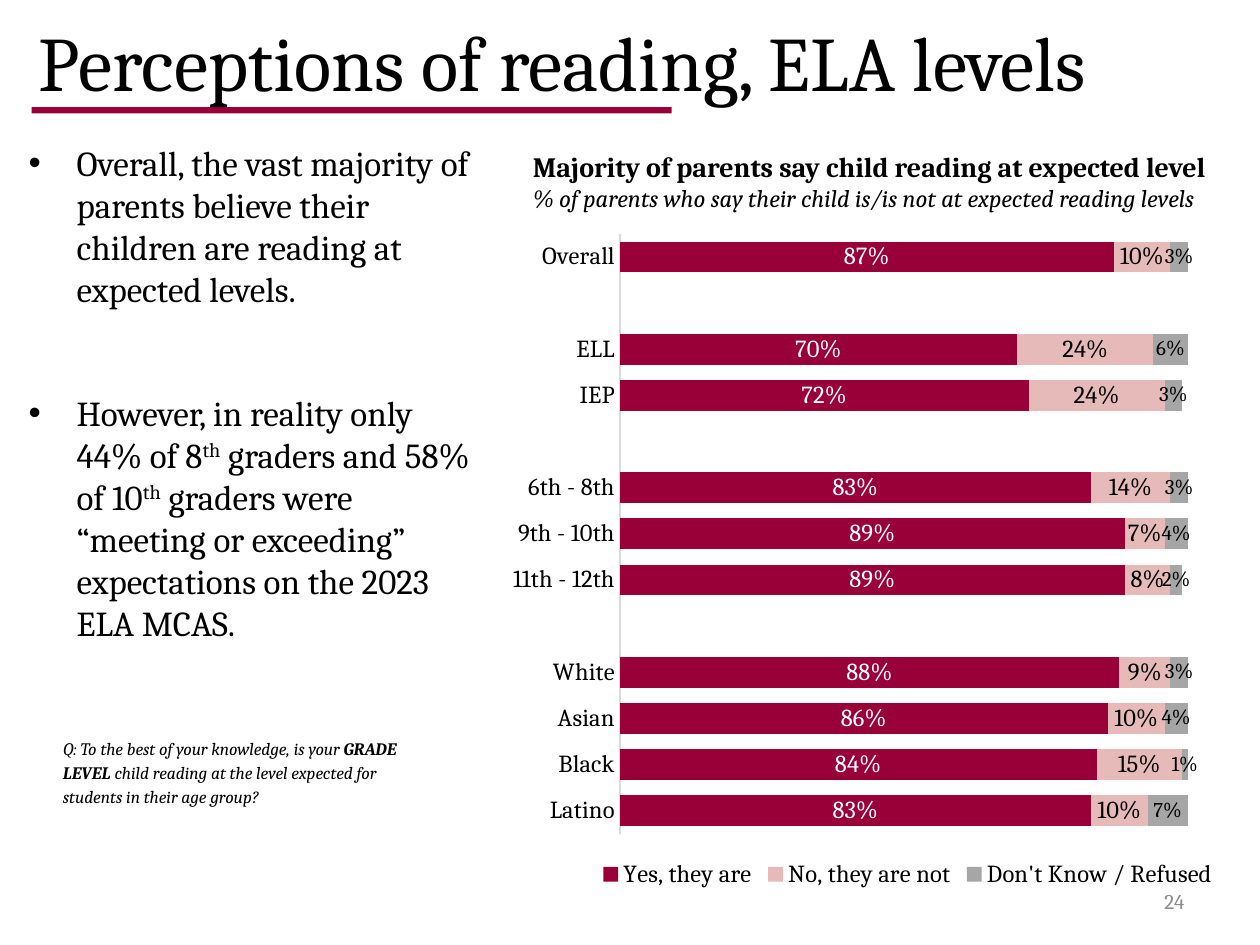
from lxml.etree import SubElement
from pptx import Presentation
from pptx.chart.data import CategoryChartData
from pptx.dml.color import RGBColor
from pptx.enum.chart import XL_CHART_TYPE, XL_LABEL_POSITION, XL_LEGEND_POSITION, XL_TICK_MARK
from pptx.enum.shapes import MSO_SHAPE
from pptx.enum.text import MSO_ANCHOR, PP_ALIGN
from pptx.oxml import parse_xml
from pptx.oxml.ns import nsdecls, qn
from pptx.util import Inches, Pt

COLORS = {
    "crimson": "990038",
    "pink": "E6BAB8",
    "gray": "A6A6A6",
    "axis": "D9D9D9",
    "number": "8C8C8C",
    "black": "000000",
    "white": "FFFFFF",
}
FONT = "Cambria"
PERCENT = "###0%"
WIDTH, HEIGHT = Inches(10), Inches(7.5)

CATEGORIES = ["Latino", "Black", "Asian", "White", "", "11th - 12th", "9th - 10th",
              "6th - 8th", "", "IEP", "ELL", "", "Overall"]
SERIES = [
    ("Yes, they are", "crimson", "white", 14,
     [0.83, 0.84, 0.86, 0.88, None, 0.89, 0.89, 0.83, None, 0.72, 0.7, None, 0.87]),
    ("No, they are not", "pink", "black", 14,
     [0.1, 0.15, 0.1, 0.09, None, 0.08, 0.07, 0.14, None, 0.24, 0.24, None, 0.1]),
    ("Don't Know / Refused", "gray", "black", 12,
     [0.07, 0.01, 0.04, 0.03, None, 0.02, 0.04, 0.03, None, 0.03, 0.06, None, 0.03]),
]
BULLETS = [
    [("Overall, the vast majority of parents believe their children are reading at "
      "expected levels.", "")],
    [("However, in reality only 44% of 8", ""), ("th", "super"),
     (" graders and 58% of 10", ""), ("th", "super"),
     (" graders were “meeting or exceeding” expectations on the 2023 ELA MCAS.", "")],
]


def color(name):
    return RGBColor.from_string(COLORS[name])


def place(left, top, width, height):
    return [int(share * side / 100) for share, side in
            zip((left, top, width, height), (WIDTH, HEIGHT, WIDTH, HEIGHT))]


def style_font(font, size, name="black"):
    font.name = FONT
    font.size = Pt(size)
    font.color.rgb = color(name)


def add_text(page, area, paragraphs, size, name="black", anchor=MSO_ANCHOR.TOP):
    frame = page.shapes.add_textbox(*place(*area)).text_frame
    frame.word_wrap = True
    frame.vertical_anchor = anchor
    for index, parts in enumerate(paragraphs):
        para = frame.paragraphs[0] if index == 0 else frame.add_paragraph()
        for text, look in parts:
            span = para.add_run()
            span.text = text
            style_font(span.font, size, name)
            if "bold" in look:
                span.font.bold = True
            if "italic" in look:
                span.font.italic = True
            if "super" in look:
                span.font._element.set("baseline", "30000")
    return frame


def add_bullets(page, area):
    frame = add_text(page, area, BULLETS, 20)
    for para in frame.paragraphs:
        properties = para._p.get_or_add_pPr()
        properties.set("marL", str(Inches(0.38)))
        properties.set("indent", str(Inches(-0.38)))
        SubElement(properties, qn("a:buFont"), typeface="Arial")
        SubElement(properties, qn("a:buChar"), char="•")
    for para in frame.paragraphs[1:]:
        para.space_before = Pt(47)


def add_rule(page, area):
    rule = page.shapes.add_shape(MSO_SHAPE.RECTANGLE, *place(*area))
    rule.shadow.inherit = False
    rule.fill.solid()
    rule.fill.fore_color.rgb = color("crimson")
    rule.line.fill.background()


def manual_layout(left, top, width, height, inner=False):
    target = '<c:layoutTarget val="inner"/>' if inner else ""
    modes = "".join(f'<c:{axis}Mode val="edge"/>' for axis in "xy")
    sizes = "".join(f'<c:{key} val="{value}"/>' for key, value in
                    zip("xywh", (left, top, width, height)))
    return parse_xml(f'<c:layout {nsdecls("c")}><c:manualLayout>{target}{modes}{sizes}'
                     "</c:manualLayout></c:layout>")


def style_axes(chart):
    groups = chart.category_axis
    groups.major_tick_mark = groups.minor_tick_mark = XL_TICK_MARK.NONE
    groups.has_major_gridlines = False
    groups.format.line.color.rgb = color("axis")
    groups.format.line.width = Pt(0.75)
    style_font(groups.tick_labels.font, 14)
    shares = chart.value_axis
    shares.minimum_scale, shares.maximum_scale = 0, 1
    shares.has_major_gridlines = False
    shares.tick_labels.number_format = PERCENT
    shares.tick_labels.number_format_is_linked = False
    shares.visible = False


def style_series(series, fill, label_color, label_size):
    series.format.fill.solid()
    series.format.fill.fore_color.rgb = color(fill)
    labels = series.data_labels
    labels.show_value = True
    labels.position = XL_LABEL_POSITION.CENTER
    labels.number_format = PERCENT
    labels.number_format_is_linked = False
    style_font(labels.font, label_size, label_color)


def add_reading_chart(page, area):
    data = CategoryChartData(number_format=PERCENT)
    data.categories = CATEGORIES
    for title, *_, values in SERIES:
        data.add_series(title, values)
    chart = page.shapes.add_chart(XL_CHART_TYPE.BAR_STACKED, *place(*area), data).chart
    chart.has_title = False
    style_font(chart.font, 14)
    style_axes(chart)
    plot = chart.plots[0]
    plot.gap_width, plot.overlap = 50, 100
    plot.vary_by_categories = False
    for series, (_, fill, label_color, label_size, _) in zip(plot.series, SERIES):
        style_series(series, fill, label_color, label_size)
    chart.has_legend = True
    chart.legend.position = XL_LEGEND_POSITION.BOTTOM
    chart.legend.include_in_layout = False
    style_font(chart.legend.font, 14)
    plot_area = chart.element.find(".//" + qn("c:plotArea"))
    for layout in plot_area.findall(qn("c:layout")):
        plot_area.remove(layout)
    plot_area.insert(0, manual_layout(0.15, 0.02, 0.69, 0.89, inner=True))
    legend_position = chart.element.find(".//" + qn("c:legendPos"))
    legend_position.addnext(manual_layout(0.12, 0.94, 0.76, 0.06))


def main():
    deck = Presentation()
    deck.slide_width, deck.slide_height = WIDTH, HEIGHT
    page = deck.slides.add_slide(deck.slide_layouts[6])
    add_rule(page, (2.5, 11.33, 50.8, 0.67))
    add_text(page, (2.1, 0, 98.7, 12.93), [[("Perceptions of reading, ELA levels", "")]],
             44, anchor=MSO_ANCHOR.MIDDLE)
    add_bullets(page, (1.3, 14.27, 37.3, 74.13))
    number = add_text(page, (71.7, 92.67, 23.3, 5.33), [[("24", "")]], 12, "number",
                      MSO_ANCHOR.MIDDLE)
    number.paragraphs[0].alignment = PP_ALIGN.RIGHT
    add_reading_chart(page, (39.4, 23.33, 65.3, 71.33))
    heading = add_text(page, (41.3, 15.2, 60.8, 8.13), [
        [("Majority of parents say child reading at expected level", "bold")],
        [("% of parents who say their child is/is not at expected reading levels", "italic")],
    ], 14)
    heading.paragraphs[0].runs[0].font.size = Pt(16)
    question = add_text(page, (4, 77.07, 31.8, 11.33), [[
        ("Q: To the best of your knowledge, is your ", "italic"),
        ("GRADE LEVEL ", "bold italic"),
        ("child reading at the level expected for students in their age group?", "italic"),
    ]], 10)
    question.paragraphs[0].line_spacing = 1.15
    deck.save("out.pptx")


if __name__ == "__main__":
    main()
